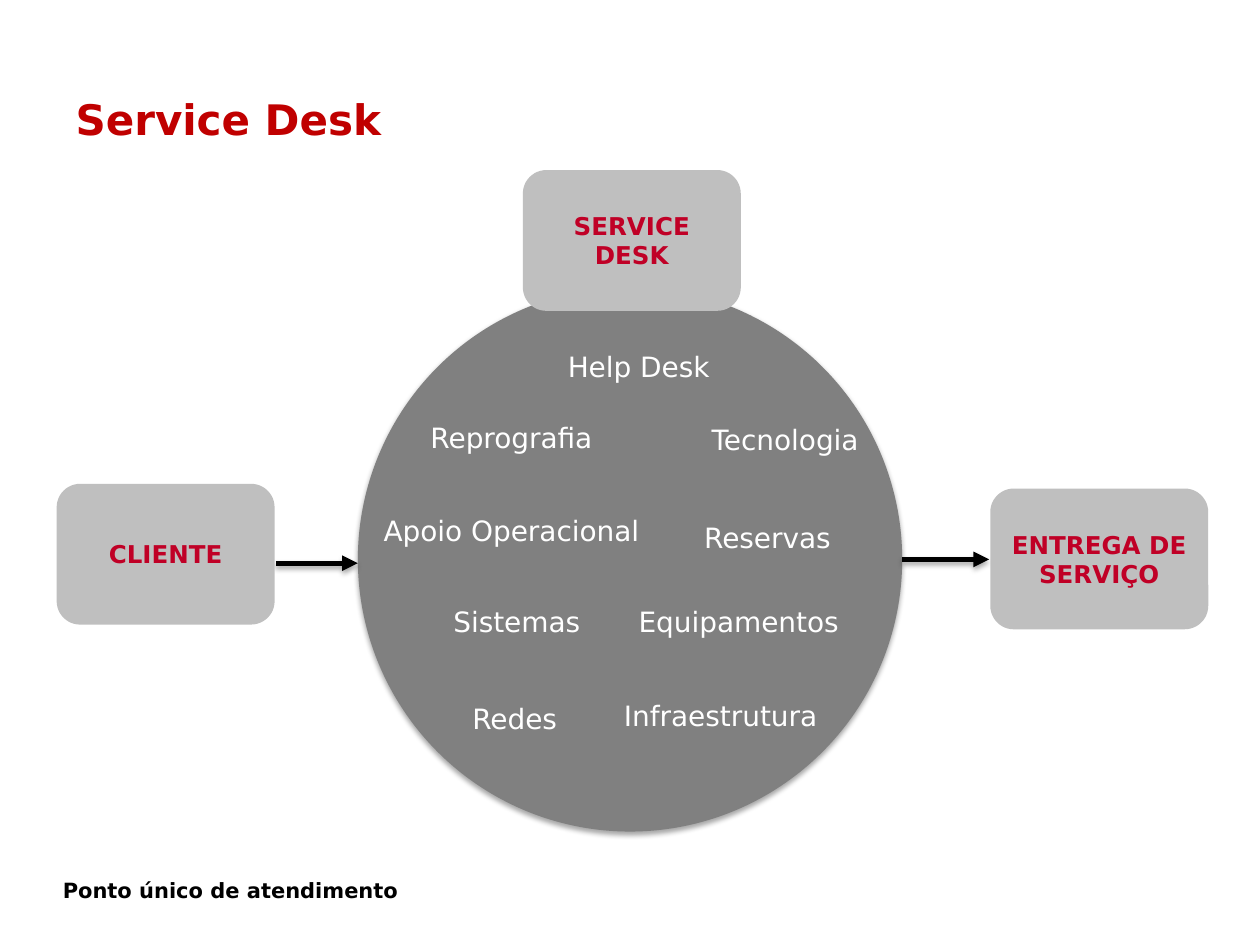
from lxml.etree import SubElement
from pptx import Presentation
from pptx.dml.color import RGBColor
from pptx.enum.shapes import MSO_CONNECTOR as CONNECTOR, MSO_SHAPE as SHAPE
from pptx.enum.text import MSO_ANCHOR as ANCHOR, MSO_AUTO_SIZE as AUTO_SIZE, PP_ALIGN as ALIGN
from pptx.oxml.ns import qn
from pptx.util import Inches, Pt

FONT = "DejaVu Sans"
WIDTH, HEIGHT = Inches(10), Inches(7.5)
COLORS = {"title": "C00000", "box": "BFBFBF", "box_text": "C00026",
          "circle": "808080", "label": "FFFFFF", "dark": "000000"}

# Text, left, top, width and height, in percent of the slide; centred or not
SERVICES = [
    ("Help Desk", 44, 36.7, 13.4, 4.7, True),
    ("Reprografia", 33.1, 44.3, 15, 4.7, True),
    ("Tecnologia", 55.5, 44.1, 13.8, 4.9, False),
    ("Apoio Operacional", 29.4, 54.1, 22.4, 4.7, True),
    ("Reservas", 54.9, 54.4, 12.1, 4.9, False),
    ("Sistemas", 35, 63.3, 12.3, 4.9, False),
    ("Equipamentos", 49.7, 63.3, 18, 4.9, False),
    ("Redes", 36.5, 73.6, 8.8, 4.9, False),
    ("Infraestrutura", 48.3, 73.7, 17.8, 4.7, True),
]
STAGES = [("SERVICE DESK", 41.5, 18), ("ENTREGA DE SERVIÇO", 78.6, 51.7),
          ("CLIENTE", 4.5, 51.2)]
ARROWS = [(21.9, 28.4, 59.6), (71.6, 78.5, 59.2)]


def rgb(name):
    return RGBColor.from_string(COLORS[name])


def place(left, top, width, height):
    """Turn percentages of the slide into lengths."""
    return [round(share * side / 100) for share, side in
            zip((left, top, width, height), (WIDTH, HEIGHT, WIDTH, HEIGHT))]


def write(paragraph, text, size, color, bold=False, align=ALIGN.LEFT):
    paragraph.alignment = align
    run = paragraph.add_run()
    run.text = text
    run.font.name, run.font.size, run.font.bold = FONT, Pt(size), bold
    run.font.color.rgb = rgb(color)


def add_soft_shadow(shape):
    properties = shape._element.spPr
    effects = SubElement(properties, qn("a:effectLst"))
    shadow = SubElement(effects, qn("a:outerShdw"), blurRad=str(Pt(3.1)),
                        dist=str(Pt(1.8)), dir="5400000", rotWithShape="0")
    color = SubElement(shadow, qn("a:srgbClr"), val=COLORS["dark"])
    SubElement(color, qn("a:alpha"), val="35000")


def add_title(slide, text):
    title = slide.shapes.title
    title.left, title.top, title.width, title.height = place(5, 9.2, 90, 12.4)
    title.text_frame.vertical_anchor = ANCHOR.TOP
    write(title.text_frame.paragraphs[0], text, 24, "title", bold=True)


def add_filled_shape(slide, kind, bounds, color):
    shape = slide.shapes.add_shape(kind, *place(*bounds))
    shape.fill.solid()
    shape.fill.fore_color.rgb = rgb(color)
    shape.line.fill.background()
    return shape


def add_arrow(slide, start, end, height):
    x1, y1, x2, y2 = place(start, height, end, height)
    arrow = slide.shapes.add_connector(CONNECTOR.STRAIGHT, x1, y1, x2, y2)
    arrow.line.width = Pt(3)
    arrow.line.color.rgb = rgb("dark")
    SubElement(arrow.line._get_or_add_ln(), qn("a:tailEnd"), type="triangle")
    add_soft_shadow(arrow)


def add_service(slide, text, left, top, width, height, centred):
    box = slide.shapes.add_textbox(*place(left, top, width, height))
    frame = box.text_frame
    frame.word_wrap = False
    frame.auto_size = AUTO_SIZE.SHAPE_TO_FIT_TEXT
    paragraph = frame.paragraphs[0]
    if centred:
        paragraph.line_spacing = 0.9
    write(paragraph, text, 16, "label", align=ALIGN.CENTER if centred else ALIGN.LEFT)


def add_stage(slide, text, left, top):
    box = add_filled_shape(slide, SHAPE.ROUNDED_RECTANGLE, (left, top, 17.3, 14.9), "box")
    box.shadow.inherit = False
    frame = box.text_frame
    frame.word_wrap = True
    frame.vertical_anchor = ANCHOR.MIDDLE
    write(frame.paragraphs[0], text, 14, "box_text", bold=True, align=ALIGN.CENTER)


def add_footer(slide, text):
    frame = slide.shapes.add_textbox(*place(4, 88.1, 82.7, 8.1)).text_frame
    frame.word_wrap = True
    frame.vertical_anchor = ANCHOR.BOTTOM
    write(frame.paragraphs[0], text, 12, "dark", bold=True)


def main():
    presentation = Presentation()
    presentation.slide_width, presentation.slide_height = WIDTH, HEIGHT
    slide = presentation.slides.add_slide(presentation.slide_layouts[5])

    add_title(slide, "Service Desk")
    circle = add_filled_shape(slide, SHAPE.OVAL, (28.4, 30.4, 43.2, 57.6), "circle")
    add_soft_shadow(circle)
    for arrow in ARROWS:
        add_arrow(slide, *arrow)
    for service in SERVICES:
        add_service(slide, *service)
    for stage in STAGES:
        add_stage(slide, *stage)
    add_footer(slide, "Ponto único de atendimento")

    presentation.save("out.pptx")


if __name__ == "__main__":
    main()
